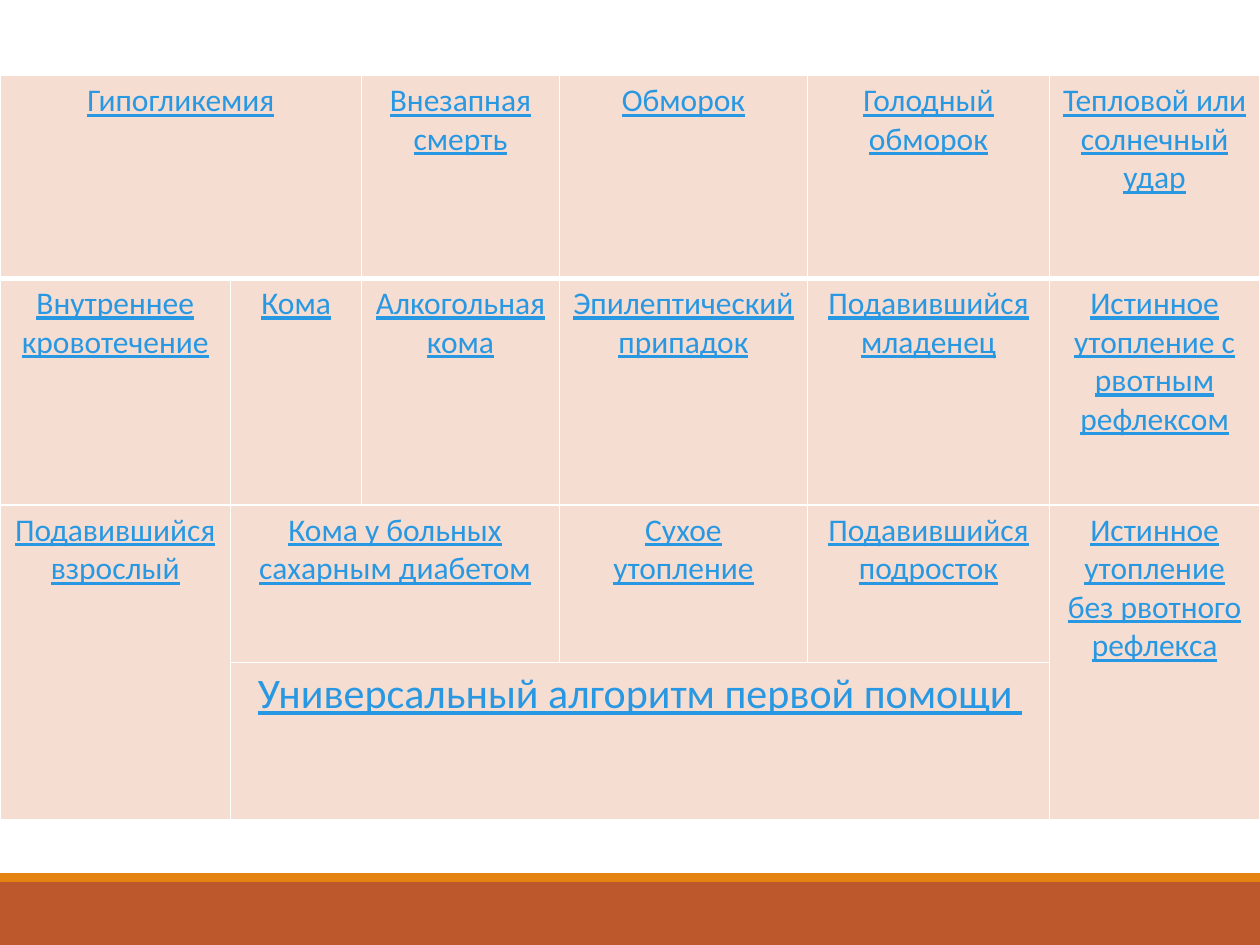
from lxml.etree import SubElement
from pptx import Presentation
from pptx.dml.color import RGBColor
from pptx.enum.shapes import MSO_SHAPE as Shape
from pptx.enum.text import PP_ALIGN as Align
from pptx.oxml.ns import qn
from pptx.util import Inches, Pt

# Content: row, column, text, rows spanned, columns spanned
TOPICS = [
    (0, 0, "Гипогликемия", 1, 2),
    (0, 2, "Внезапная смерть", 1, 1),
    (0, 3, "Обморок", 1, 1),
    (0, 4, "Голодный обморок", 1, 1),
    (0, 5, "Тепловой или солнечный удар", 1, 1),
    (1, 0, "Внутреннее кровотечение", 1, 1),
    (1, 1, "Кома", 1, 1),
    (1, 2, "Алкогольная кома", 1, 1),
    (1, 3, "Эпилептический припадок", 1, 1),
    (1, 4, "Подавившийся младенец", 1, 1),
    (1, 5, "Истинное утопление с рвотным рефлексом", 1, 1),
    (2, 0, "Подавившийся\nвзрослый", 2, 1),
    (2, 1, "Кома у больных сахарным диабетом", 1, 2),
    (2, 3, "Сухое утопление", 1, 1),
    (2, 4, "Подавившийся подросток", 1, 1),
    (2, 5, "Истинное утопление без рвотного рефлекса", 2, 1),
    (3, 1, "Универсальный алгоритм первой помощи ", 1, 4),
]
COLUMN_WIDTHS = [1.83, 1.04, 1.57, 1.97, 1.92, 1.67]
ROW_HEIGHTS = [1.61, 1.8, 1.25, 1.25]
FOOTER_BANDS = [(7, 0.5, "BD582C"), (6.93, 0.07, "E48312")]  # top, height, colour
CELL_FILL, BORDER, LINK = "F5DDD2", "FFFFFF", "2998E3"
TOPIC_FONT = {"name": "Calibri", "size": Pt(18), "bold": False, "underline": True}
ALGORITHM_FONT = {**TOPIC_FONT, "size": Pt(24)}


def paint(fill, colour):
    fill.solid()
    fill.fore_color.rgb = RGBColor.from_string(colour)


def add_borders(cell, widths):
    properties = cell._tc.get_or_add_tcPr()
    for side, width in widths.items():
        line = SubElement(properties, qn(f"a:ln{side}"), w=str(Pt(width)))
        solid = SubElement(line, qn("a:solidFill"))
        SubElement(solid, qn("a:srgbClr"), val=BORDER)


prs = Presentation()
prs.slide_width, prs.slide_height = Inches(10), Inches(7.5)
slide = prs.slides.add_slide(prs.slide_layouts[6])

# Footer bands
for top, height, colour in FOOTER_BANDS:
    band = slide.shapes.add_shape(
        Shape.RECTANGLE, 0, Inches(top), prs.slide_width, Inches(height))
    band.shadow.inherit = False
    band.line.fill.background()
    paint(band.fill, colour)

# Table grid
table = slide.shapes.add_table(
    len(ROW_HEIGHTS), len(COLUMN_WIDTHS), 0, Inches(0.6),
    Inches(sum(COLUMN_WIDTHS)), Inches(sum(ROW_HEIGHTS))).table
table.first_row = table.horz_banding = False
for column, width in zip(table.columns, COLUMN_WIDTHS):
    column.width = Inches(width)
for row_number, (row, height) in enumerate(zip(table.rows, ROW_HEIGHTS)):
    row.height = Inches(height)
    for cell in row.cells:
        # A thick rule separates the first row from the rest
        add_borders(cell, {"L": 1, "R": 1,
                           "T": 3 if row_number == 1 else 1,
                           "B": 3 if row_number == 0 else 1})
        paint(cell.fill, CELL_FILL)

# Topics
for row, column, text, row_span, column_span in TOPICS:
    cell = table.cell(row, column)
    if row_span * column_span > 1:
        cell.merge(table.cell(row + row_span - 1, column + column_span - 1))
    cell.text = text
    font_format = ALGORITHM_FONT if row == 3 else TOPIC_FONT
    for paragraph in cell.text_frame.paragraphs:
        paragraph.alignment = Align.CENTER
        font = paragraph.runs[0].font
        for attribute, value in font_format.items():
            setattr(font, attribute, value)
        font.color.rgb = RGBColor.from_string(LINK)

prs.save("out.pptx")
